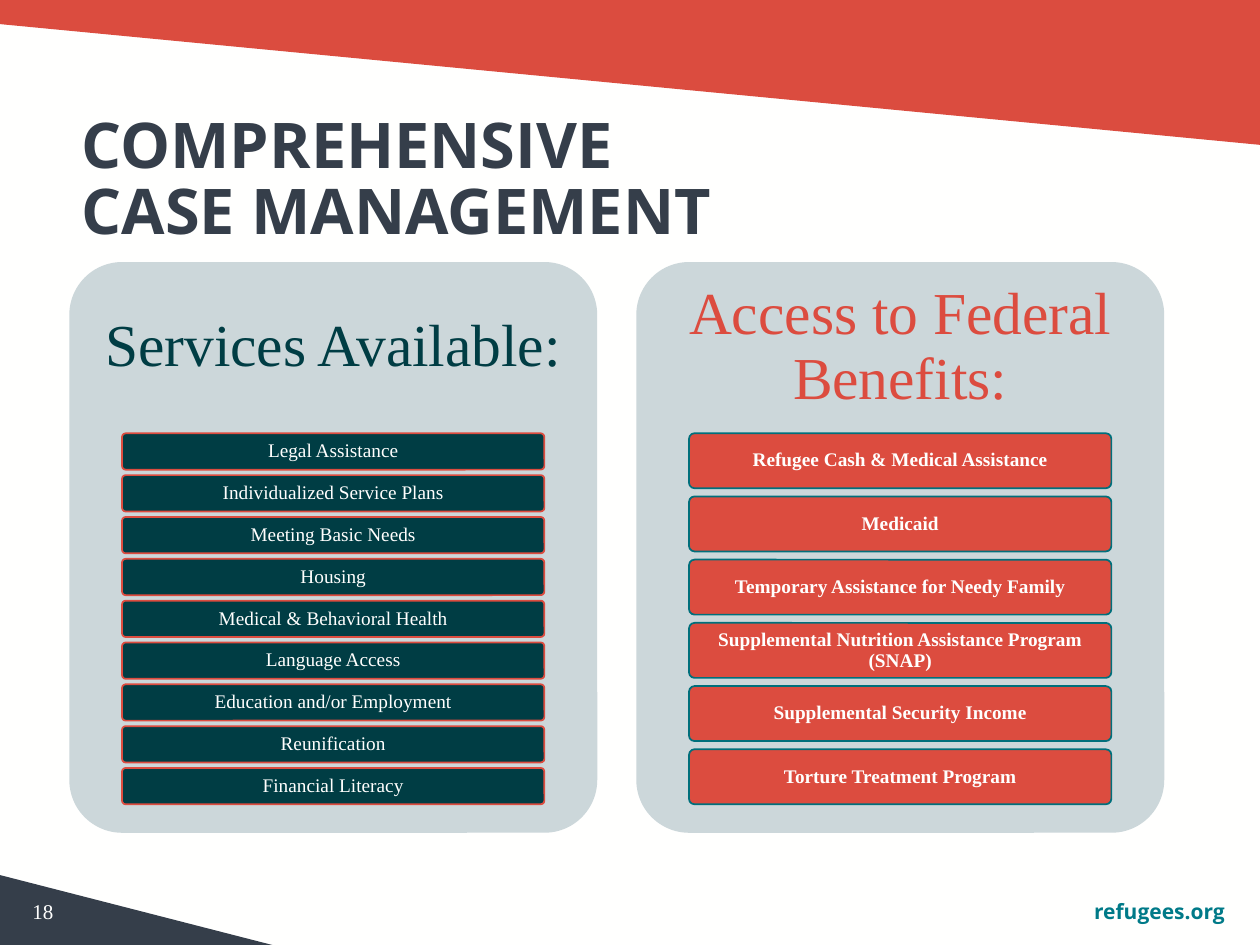
import pptx
import pptx.util
import pptx.dml.color
import pptx.enum.shapes
import pptx.enum.text
from pptx.util import Inches

SERIF = "Times New Roman"
SANS = "Open Sans"
WHITE = "FFFFFE"
RED = "DC4C3F"
SLATE = "353E4A"
TEAL = "003D44"
ALIGN = pptx.enum.text.PP_ALIGN
ANCHOR = pptx.enum.text.MSO_ANCHOR

SERVICES = [
    "Legal Assistance",
    "Individualized Service Plans",
    "Meeting Basic Needs",
    "Housing",
    "Medical & Behavioral Health",
    "Language Access",
    "Education and/or Employment",
    "Reunification",
    "Financial Literacy",
]
BENEFITS = [
    "Refugee Cash & Medical Assistance",
    "Medicaid",
    "Temporary Assistance for Needy Family",
    "Supplemental Nutrition Assistance Program (SNAP)",
    "Supplemental Security Income",
    "Torture Treatment Program",
]


def rgb(color):
    return pptx.dml.color.RGBColor.from_string(color)


def set_fill(shape, color):
    shape.shadow.inherit = False
    shape.fill.solid()
    shape.fill.fore_color.rgb = rgb(color)
    shape.line.fill.background()


def write(shape, text, size, color, font=SERIF, bold=False, align=ALIGN.LEFT,
          anchor=ANCHOR.MIDDLE, spacing=None, insets=(0.1, 0.05)):
    tf = shape.text_frame
    tf.word_wrap = True
    tf.vertical_anchor = anchor
    tf.margin_left = tf.margin_right = Inches(insets[0])
    tf.margin_top = tf.margin_bottom = Inches(insets[1])
    p = tf.paragraphs[0]
    p.text = text
    p.alignment = align
    p.line_spacing = spacing
    p.font.name = font
    p.font.size = pptx.util.Pt(size)
    p.font.bold = bold
    p.font.color.rgb = rgb(color)


def add_text(s, box, text, size, color, **style):
    write(s.shapes.add_textbox(*map(Inches, box)), text, size, color, **style)


def add_round_box(s, box, color):
    shape = s.shapes.add_shape(
        pptx.enum.shapes.MSO_SHAPE.ROUNDED_RECTANGLE, *map(Inches, box))
    shape.adjustments[0] = 0.1
    set_fill(shape, color)
    return shape


def add_polygon(s, points, color):
    start, *rest = [(Inches(x), Inches(y)) for x, y in points]
    builder = s.shapes.build_freeform(*start)
    builder.add_line_segments(rest, close=True)
    set_fill(builder.convert_to_shape(), color)


def add_header(s, box):
    x, y, w, h = box
    add_polygon(s, [(x, 0.19), (10, y + h), (x + w, y), (x, y)], "DB4C3F")


def add_title(s, box):
    add_text(s, box, "COMPREHENSIVE\vCASE MANAGEMENT", 36, SLATE, font=SANS,
             bold=True, anchor=ANCHOR.TOP, spacing=pptx.util.Pt(38))


def add_footer(s, box):
    x, y, w, h = box
    add_polygon(s, [(x, y), (x + 2.22, y + h), (x, y + h)], SLATE)
    add_text(s, (x + 7.51, y + 0.09, 2.33, 0.4), "refugees.org", 12, "007A88",
             font=SANS, bold=True, align=ALIGN.RIGHT)
    add_text(s, (x + 0.18, y + 0.09, 2.33, 0.4), "18", 12, WHITE)


def add_panel(s, box, heading, items, heading_color, fill, border, bold):
    x, y, w, h = box
    add_round_box(s, box, "CCD7DA")
    add_text(s, (x, y, w, 0.3 * h), heading, 34, heading_color,
             align=ALIGN.CENTER, spacing=0.9, insets=(0.14, 0.14))
    gap_ratio = 0.15
    item_h = 0.65 * h / (len(items) + gap_ratio * (len(items) - 1))
    for i, item in enumerate(items):
        top = y + 0.3 * h + i * item_h * (1 + gap_ratio)
        shape = add_round_box(s, (x + 0.1 * w, top, 0.8 * w, item_h), fill)
        shape.line.color.rgb = rgb(border)
        shape.line.width = pptx.util.Pt(1)
        write(shape, item, 11, WHITE, bold=bold, align=ALIGN.CENTER,
              spacing=0.9, insets=(0.03, 0.02))


def main():
    prs = pptx.Presentation()
    prs.slide_width, prs.slide_height = Inches(10), Inches(7.5)
    s = prs.slides.add_slide(prs.slide_layouts[6])
    s.background.fill.solid()
    s.background.fill.fore_color.rgb = rgb(WHITE)
    add_footer(s, (-0.02, 6.94, 10.04, 0.57))
    add_header(s, (-0.02, -0.02, 10.05, 1.17))
    add_title(s, (0.55, 0.86, 8.24, 1.22))
    add_panel(s, (0.55, 2.08, 4.19, 4.53), "Services Available:",
              SERVICES, TEAL, TEAL, RED, False)
    add_panel(s, (5.05, 2.08, 4.19, 4.53), "Access to Federal Benefits:",
              BENEFITS, RED, RED, "006F7B", True)
    prs.save("out.pptx")


if __name__ == "__main__":
    main()
